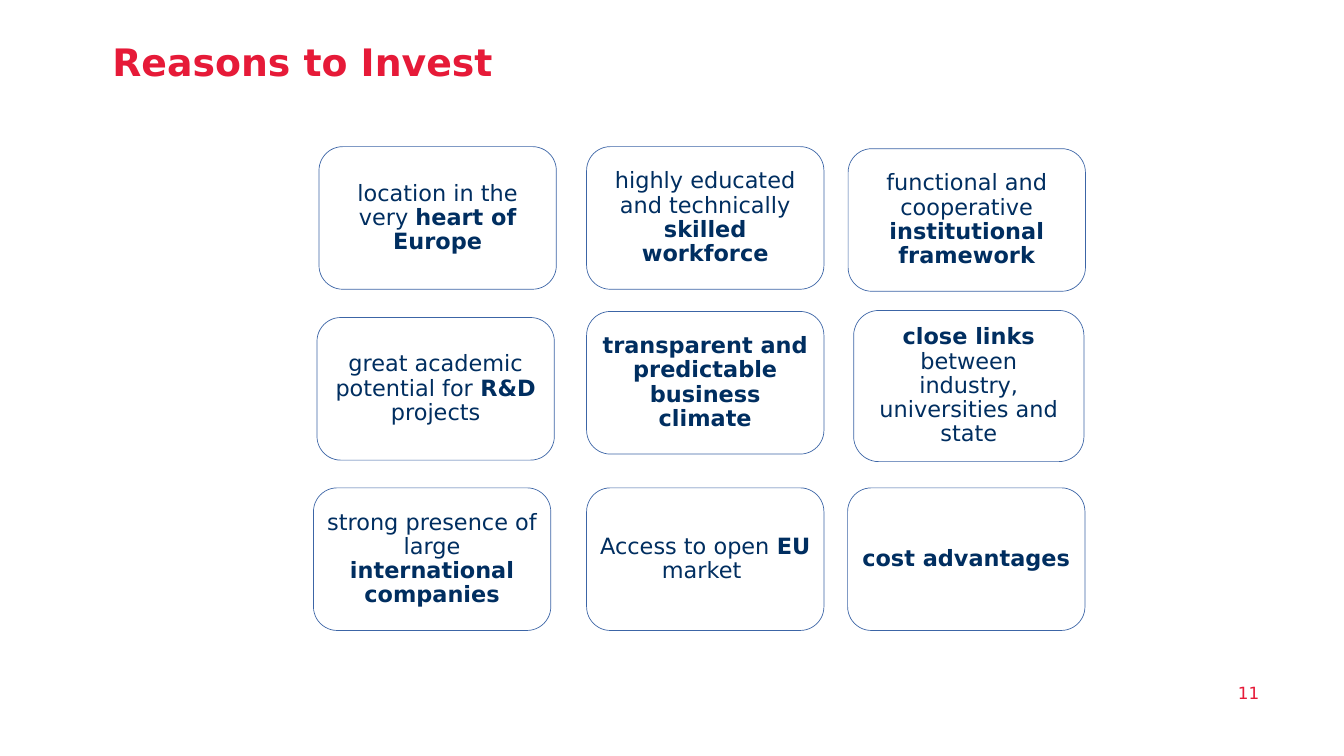
import pptx
import pptx.dml.color
import pptx.enum.shapes
import pptx.enum.text
import pptx.util

Inches = pptx.util.Inches
Align = pptx.enum.text.PP_ALIGN
Anchor = pptx.enum.text.MSO_ANCHOR

COLORS = {"red": "E61A38", "navy": "002E60", "blue": "3C65A6", "white": "FFFFFF"}
FONT = "DejaVu Sans"


def rgb(name):
    return pptx.dml.color.RGBColor.from_string(COLORS[name])


def write_text(shape, text, *, size, color, align=Align.LEFT,
               anchor=Anchor.MIDDLE, inset=0, line_spacing=1.0):
    """Fill a shape with one paragraph; parts between asterisks are bold."""
    frame = shape.text_frame
    frame.word_wrap = True
    frame.vertical_anchor = anchor
    frame.margin_left = frame.margin_right = Inches(inset)
    frame.margin_top = frame.margin_bottom = Inches(inset)
    paragraph = frame.paragraphs[0]
    paragraph.alignment = align
    paragraph.line_spacing = line_spacing
    for index, part in enumerate(text.split("*")):
        if part:
            run = paragraph.add_run()
            run.text = part
            run.font.name = FONT
            run.font.size = pptx.util.Pt(size)
            run.font.bold = index % 2 == 1
            run.font.color.rgb = rgb(color)


presentation = pptx.Presentation()
presentation.slide_width = Inches(26.67)
presentation.slide_height = Inches(15)
slide = presentation.slides.add_slide(presentation.slide_layouts[6])

# Title
title = slide.shapes.add_textbox(Inches(2.23), Inches(0.87), Inches(23.55), Inches(0.83))
write_text(title, "*Reasons to Invest*", size=54, color="red",
           anchor=Anchor.TOP, line_spacing=0.9)

# Slide number
number = slide.shapes.add_textbox(Inches(22), Inches(13.41), Inches(2.99), Inches(0.67))
write_text(number, "11", size=24, color="red", align=Align.RIGHT)

# Reason cards, placed by hand: left, top, width, height, text
CARD = (4.71, 2.83)
reasons = [
    (6.33, 2.91, *CARD, "location in the very *heart of Europe*"),
    (11.64, 2.91, *CARD, "highly educated and technically *skilled workforce*"),
    (16.83, 2.95, *CARD, "functional and cooperative *institutional framework*"),
    (6.29, 6.3, *CARD, "great academic potential for *R&D* projects"),
    (11.64, 6.18, *CARD, "*transparent and predictable business climate*"),
    (16.94, 6.16, 4.57, 3, "*close links *between industry, universities and state"),
    (6.22, 9.68, *CARD, "strong presence of large *international companies*"),
    (11.64, 9.68, *CARD, "Access to open *EU* market "),
    (16.82, 9.68, *CARD, "*cost advantages*"),
]
for left, top, width, height, text in reasons:
    card = slide.shapes.add_shape(
        pptx.enum.shapes.MSO_SHAPE.ROUNDED_RECTANGLE,
        Inches(left), Inches(top), Inches(width), Inches(height))
    card.shadow.inherit = False
    card.fill.solid()
    card.fill.fore_color.rgb = rgb("white")
    card.line.color.rgb = rgb("blue")
    card.line.width = pptx.util.Pt(1)
    write_text(card, text, size=32, color="navy", align=Align.CENTER,
               inset=0.13, line_spacing=0.9)

presentation.save("out.pptx")
